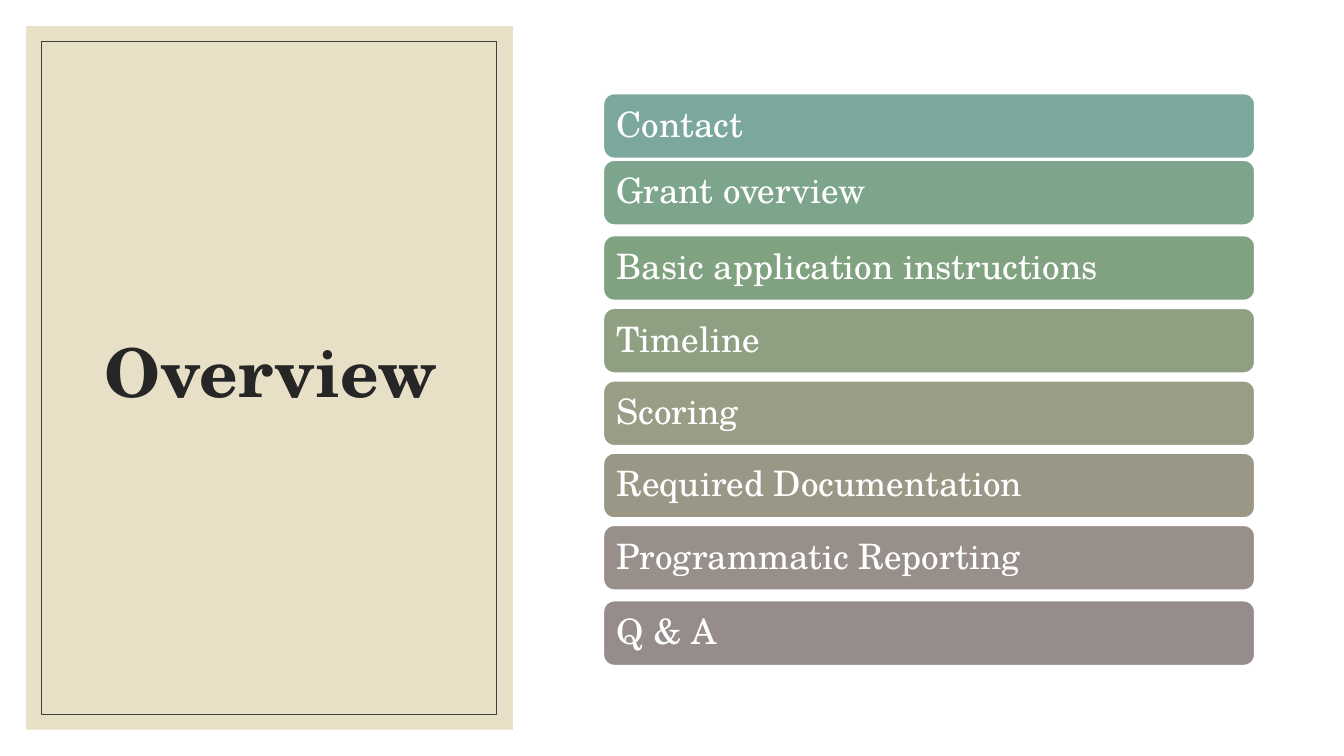
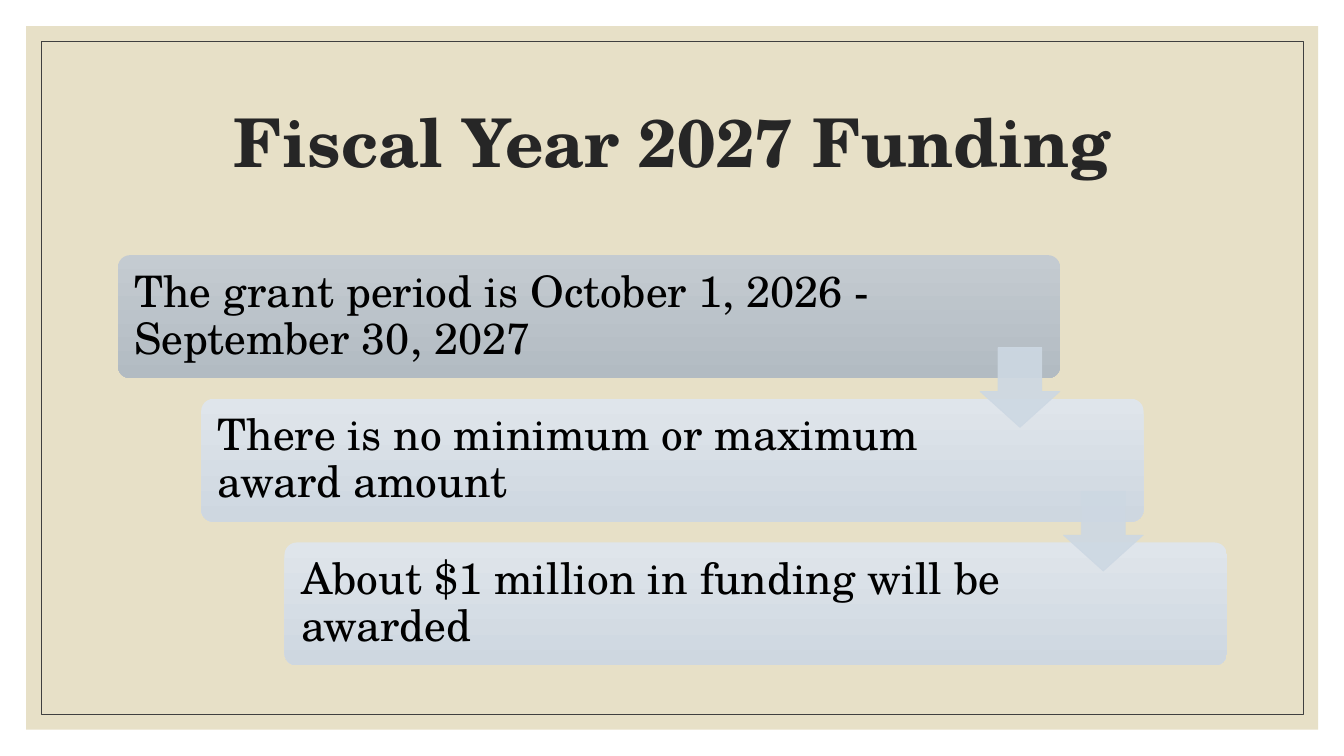
from dataclasses import dataclass

from lxml.etree import SubElement
from pptx import Presentation
from pptx.dml.color import RGBColor
from pptx.enum.shapes import MSO_SHAPE as Preset
from pptx.enum.text import MSO_ANCHOR as Anchor, MSO_AUTO_SIZE as AutoSize, PP_ALIGN as Align
from pptx.oxml.ns import qn
from pptx.util import Cm, Pt


@dataclass(frozen=True)
class Theme:
    font: str = "TeX Gyre Schola"
    title_size: int = 48
    agenda_size: int = 25
    step_size: int = 31
    sand: str = "E7E0C7"
    frame: str = "404040"
    title: str = "262626"
    white: str = "FFFFFF"
    black: str = "000000"
    first_step: tuple = ("C4CBD1", "B2BBC2")
    next_step: tuple = ("DFE5EB", "CED7E0")
    arrow: str = "CDD8E3"


THEME = Theme()
rgb = RGBColor.from_string


def write(shape, text, size, color, align=Align.LEFT, bold=False):
    text_frame = shape.text_frame
    text_frame.text = text
    text_frame.word_wrap = True
    text_frame.auto_size = AutoSize.NONE
    text_frame.vertical_anchor = Anchor.MIDDLE
    paragraph = text_frame.paragraphs[0]
    paragraph.alignment = align
    paragraph.line_spacing = 0.9
    font = paragraph.runs[0].font
    font.name = THEME.font
    font.size = Pt(size)
    font.bold = bold
    font.color.rgb = rgb(color)


def add_framed_slide(title_text, title_box, panel_width, frame_width):
    """Add a slide with a sand panel and a thin frame behind its title."""
    slide = presentation.slides.add_slide(presentation.slide_layouts[5])
    title = slide.shapes.title
    title.left, title.top, title.width, title.height = map(Cm, title_box)
    write(title, title_text, THEME.title_size, THEME.title, Align.CENTER, bold=True)

    panel = slide.shapes.add_shape(
        Preset.RECTANGLE, Cm(0.66), Cm(0.66), Cm(panel_width), Cm(17.73))
    panel.fill.solid()
    panel.fill.fore_color.rgb = rgb(THEME.sand)
    panel.line.fill.background()

    frame = slide.shapes.add_shape(
        Preset.RECTANGLE, Cm(1.04), Cm(1.04), Cm(frame_width), Cm(16.97))
    frame.fill.background()
    frame.line.color.rgb = rgb(THEME.frame)
    frame.line.width = Pt(0.5)

    for shape in (panel, frame):
        shape.shadow.inherit = False
        title.element.addprevious(shape.element)
    return slide


presentation = Presentation()
presentation.slide_width = Cm(33.87)
presentation.slide_height = Cm(19.05)

# Overview
overview = add_framed_slide("Overview", (1.6, 1.55, 10.46, 15.85), 12.27, 11.46)
agenda = [
    ("Contact", 2.36, "7BA79D"),
    ("Grant overview", 4.04, "7DA58C"),
    ("Basic application instructions", 5.94, "81A280"),
    ("Timeline", 7.77, "8FA082"),
    ("Scoring", 9.6, "999D85"),
    ("Required Documentation", 11.42, "9B9787"),
    ("Programmatic Reporting", 13.24, "988F8A"),
    ("Q & A", 15.14, "968C8C"),
]
for text, top, color in agenda:
    bar = overview.shapes.add_shape(
        Preset.ROUNDED_RECTANGLE, Cm(15.21), Cm(top), Cm(16.41), Cm(1.63))
    bar.shadow.inherit = False
    bar.fill.solid()
    bar.fill.fore_color.rgb = rgb(color)
    bar.line.color.rgb = rgb(THEME.white)
    bar.line.width = Pt(1)
    write(bar, text, THEME.agenda_size, THEME.white)

# Funding
funding = add_framed_slide(
    "Fiscal Year 2027 Funding", (2.97, 1.78, 27.94, 3.81), 32.56, 31.8)
shift, drop = 2.1, 3.62
steps = [
    ("The grant period is October 1, 2026 - September 30, 2027", THEME.first_step, 3.52),
    ("There is no minimum or maximum award amount", THEME.next_step, 4.43),
    ("About $1 million in funding will be awarded", THEME.next_step, 4.43),
]
for index, (text, colors, right_margin) in enumerate(steps):
    step = funding.shapes.add_shape(
        Preset.ROUNDED_RECTANGLE, Cm(2.97 + index * shift), Cm(6.43 + index * drop),
        Cm(23.75), Cm(3.1))
    step.adjustments[0] = 0.1
    step.shadow.inherit = False
    step.fill.gradient()
    step.fill.gradient_angle = 270
    for stop, color in zip(step.fill.gradient_stops, colors):
        stop.color.rgb = rgb(color)
    step.line.fill.background()
    write(step, text, THEME.step_size, THEME.black)
    step.text_frame.margin_left = Cm(0.33)
    step.text_frame.margin_right = Cm(right_margin)

for index in range(len(steps) - 1):
    arrow = funding.shapes.add_shape(
        Preset.DOWN_ARROW, Cm(24.7 + index * shift), Cm(8.76 + index * drop),
        Cm(2.01), Cm(2.01))
    arrow.adjustments[0] = 0.55
    arrow.adjustments[1] = 0.45
    arrow.shadow.inherit = False
    arrow.fill.solid()
    arrow.fill.fore_color.rgb = rgb(THEME.arrow)
    arrow.line.color.rgb = rgb(THEME.arrow)
    arrow.line.width = Pt(0.5)
    for color_element in arrow.element.iter(qn("a:srgbClr")):
        SubElement(color_element, qn("a:alpha"), val="90000")

presentation.save("out.pptx")
